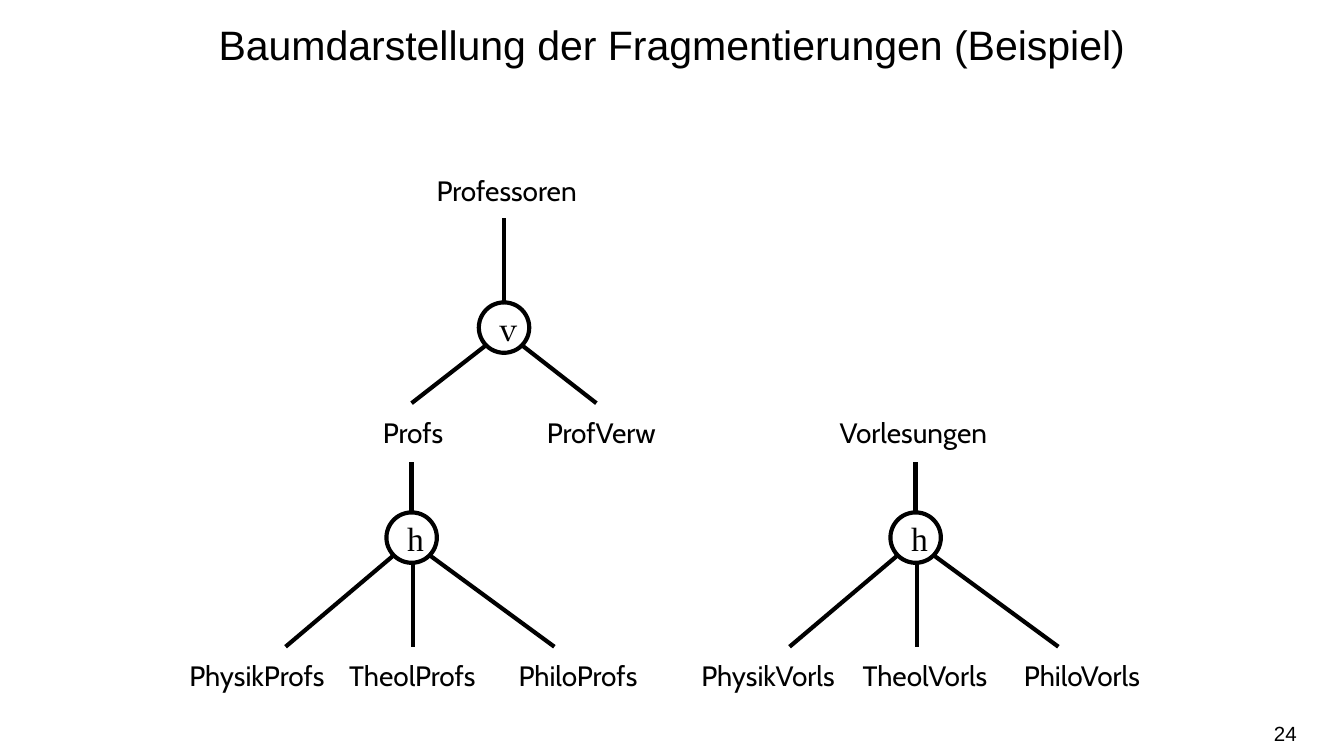
"""Build a slide with the tree view of horizontal and vertical fragmentations."""
from typing import NamedTuple

from lxml.etree import SubElement
from pptx import Presentation
from pptx.dml.color import RGBColor
from pptx.enum.shapes import MSO_CONNECTOR, MSO_SHAPE
from pptx.enum.text import MSO_ANCHOR, MSO_AUTO_SIZE, PP_ALIGN
from pptx.oxml.ns import qn
from pptx.util import Inches, Length, Pt

COLORS = {"ink": "000000", "background": "FFFFFF"}
LINE_WIDTH = Pt(2.25)
STEPS_PER_INCH = 16
RADIUS = 3
LABEL_HEIGHT = 0.35


class Branch(NamedTuple):
    """A line given by grid steps from the centre of its split node."""

    start_x: float
    start_y: float
    end_x: float
    end_y: float


class Split(NamedTuple):
    """A round node with its stem and branches, in grid steps."""

    mark: str
    font: str
    x: float
    y: float
    stem_top: float
    branches: tuple[Branch, ...]


class Label(NamedTuple):
    """A relation name beside the tree lines, in inches."""

    text: str
    left: float
    top: float
    width: float


VERTICAL = (Branch(-2, 2, -11, 9), Branch(2, 2, 11, 9))
HORIZONTAL = (Branch(-2, 2, -15, 13), Branch(0.15, 3, 0.15, 13), Branch(2, 2, 17, 13))
SPLITS = (
    Split("v", "TeX Gyre Pagella", 60, 39, 26, VERTICAL),
    Split("h", "Times New Roman", 49, 64, 55, HORIZONTAL),
    Split("h", "Times New Roman", 109, 64, 55, HORIZONTAL),
)
ROOT_TOP, MIDDLE_TOP, LEAF_TOP = 1.24, 3.04, 4.85
LABELS = (
    Label("Professoren", 3.15, ROOT_TOP, 1.29),
    Label("Profs", 2.75, MIDDLE_TOP, 0.67),
    Label("ProfVerw", 3.97, MIDDLE_TOP, 1.03),
    Label("Vorlesungen", 6.15, MIDDLE_TOP, 1.34),
    Label("PhysikProfs", 1.31, LEAF_TOP, 1.25),
    Label("TheolProfs", 2.5, LEAF_TOP, 1.18),
    Label("PhiloProfs", 3.76, LEAF_TOP, 1.11),
    Label("PhysikVorls", 5.12, LEAF_TOP, 1.23),
    Label("TheolVorls", 6.32, LEAF_TOP, 1.16),
    Label("PhiloVorls", 7.52, LEAF_TOP, 1.09),
)


def color(name: str) -> RGBColor:
    """Return a named colour."""
    return RGBColor.from_string(COLORS[name])


def steps(count: float) -> Length:
    """Return the length of a number of grid steps."""
    return Inches(count / STEPS_PER_INCH)


def write(shape, text: str, *, size: float, font: str, align=PP_ALIGN.LEFT,
          anchor=MSO_ANCHOR.TOP, wrap: bool = False, spacing=None,
          auto_size=MSO_AUTO_SIZE.NONE) -> None:
    """Put one formatted paragraph into a shape."""
    frame = shape.text_frame
    frame.auto_size = auto_size
    frame.word_wrap = wrap
    frame.vertical_anchor = anchor
    para = frame.paragraphs[0]
    para.alignment = align
    para.line_spacing = spacing
    span = para.add_run()
    span.text = text
    span.font.size = Pt(size)
    span.font.name = font
    span.font.color.rgb = color("ink")


def draw_line(page, start_x: float, start_y: float, end_x: float, end_y: float) -> None:
    """Draw a straight tree edge between two grid points."""
    edge = page.shapes.add_connector(
        MSO_CONNECTOR.STRAIGHT, steps(start_x), steps(start_y), steps(end_x), steps(end_y))
    edge.line.color.rgb = color("ink")
    edge.line.width = LINE_WIDTH
    SubElement(edge._element.spPr, qn("a:effectLst"))


def draw_split(page, split: Split) -> None:
    """Draw a split node with its stem and branches."""
    node = page.shapes.add_shape(
        MSO_SHAPE.OVAL, steps(split.x - RADIUS), steps(split.y - RADIUS),
        steps(2 * RADIUS), steps(2 * RADIUS))
    node.shadow.inherit = False
    node.fill.background()
    node.line.color.rgb = color("ink")
    node.line.width = LINE_WIDTH
    write(node, split.mark, size=18, font=split.font, anchor=MSO_ANCHOR.MIDDLE)
    draw_line(page, split.x, split.y - RADIUS, split.x, split.stem_top)
    for branch in split.branches:
        draw_line(page, split.x + branch.start_x, split.y + branch.start_y,
                  split.x + branch.end_x, split.y + branch.end_y)


def draw_label(page, label: Label) -> None:
    """Write a relation name."""
    box = page.shapes.add_textbox(
        Inches(label.left), Inches(label.top), Inches(label.width), Inches(LABEL_HEIGHT))
    write(box, label.text, size=15, font="Cabin", auto_size=MSO_AUTO_SIZE.SHAPE_TO_FIT_TEXT)


def draw_title(page, text: str) -> None:
    """Place and fill the title placeholder."""
    title = page.shapes.title
    title.left, title.top = Inches(1.25), Inches(0)
    title.width, title.height = Inches(7.5), Inches(1)
    write(title, text, size=22, font="Arial", align=PP_ALIGN.CENTER, wrap=True, spacing=1.25)


def draw_page_number(page, number: str) -> None:
    """Write the page number at the lower right."""
    box = page.shapes.add_textbox(Inches(7.41), Inches(5.31), Inches(2.24), Inches(0.3))
    box.text_frame.margin_left = box.text_frame.margin_right = 0
    write(box, number, size=11, font="Arial", align=PP_ALIGN.RIGHT,
          anchor=MSO_ANCHOR.MIDDLE, wrap=True)


def main() -> None:
    """Build and save the deck."""
    deck = Presentation()
    deck.slide_width, deck.slide_height = steps(160), steps(90)
    page = deck.slides.add_slide(deck.slide_layouts[5])
    page.background.fill.solid()
    page.background.fill.fore_color.rgb = color("background")
    draw_title(page, "Baumdarstellung der Fragmentierungen (Beispiel)")
    for split in SPLITS:
        draw_split(page, split)
    for label in LABELS:
        draw_label(page, label)
    draw_page_number(page, "24")
    deck.save("out.pptx")


if __name__ == "__main__":
    main()
